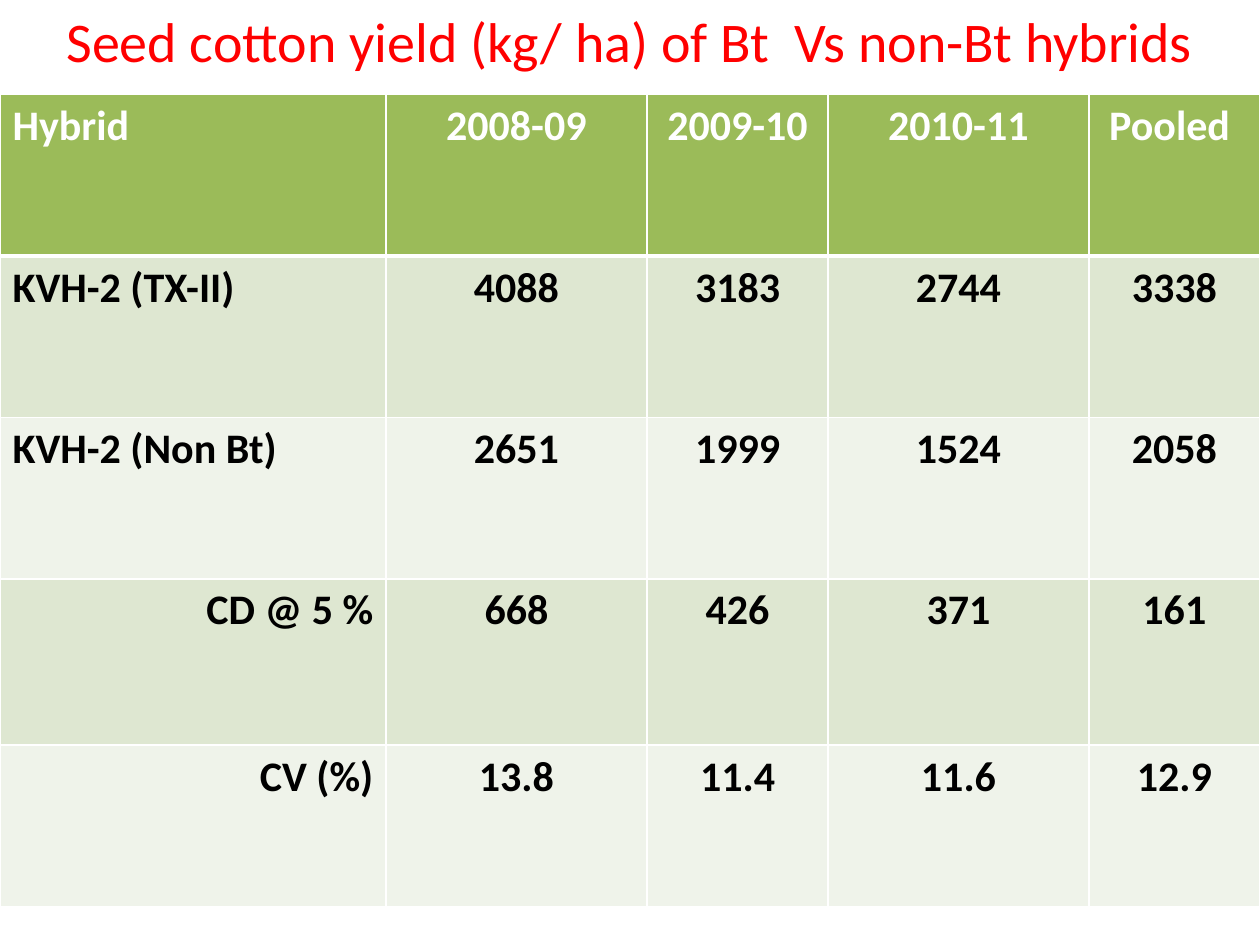
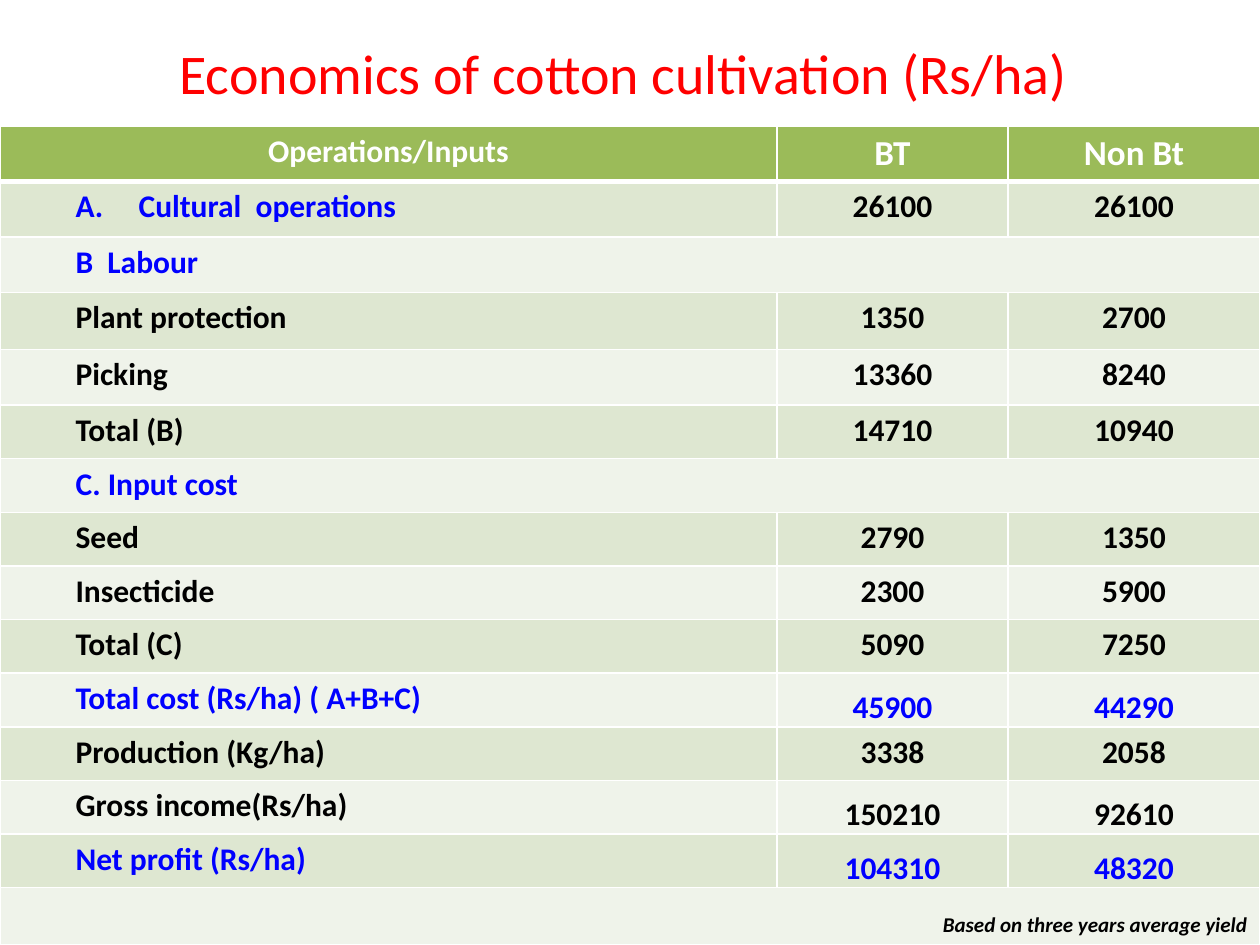
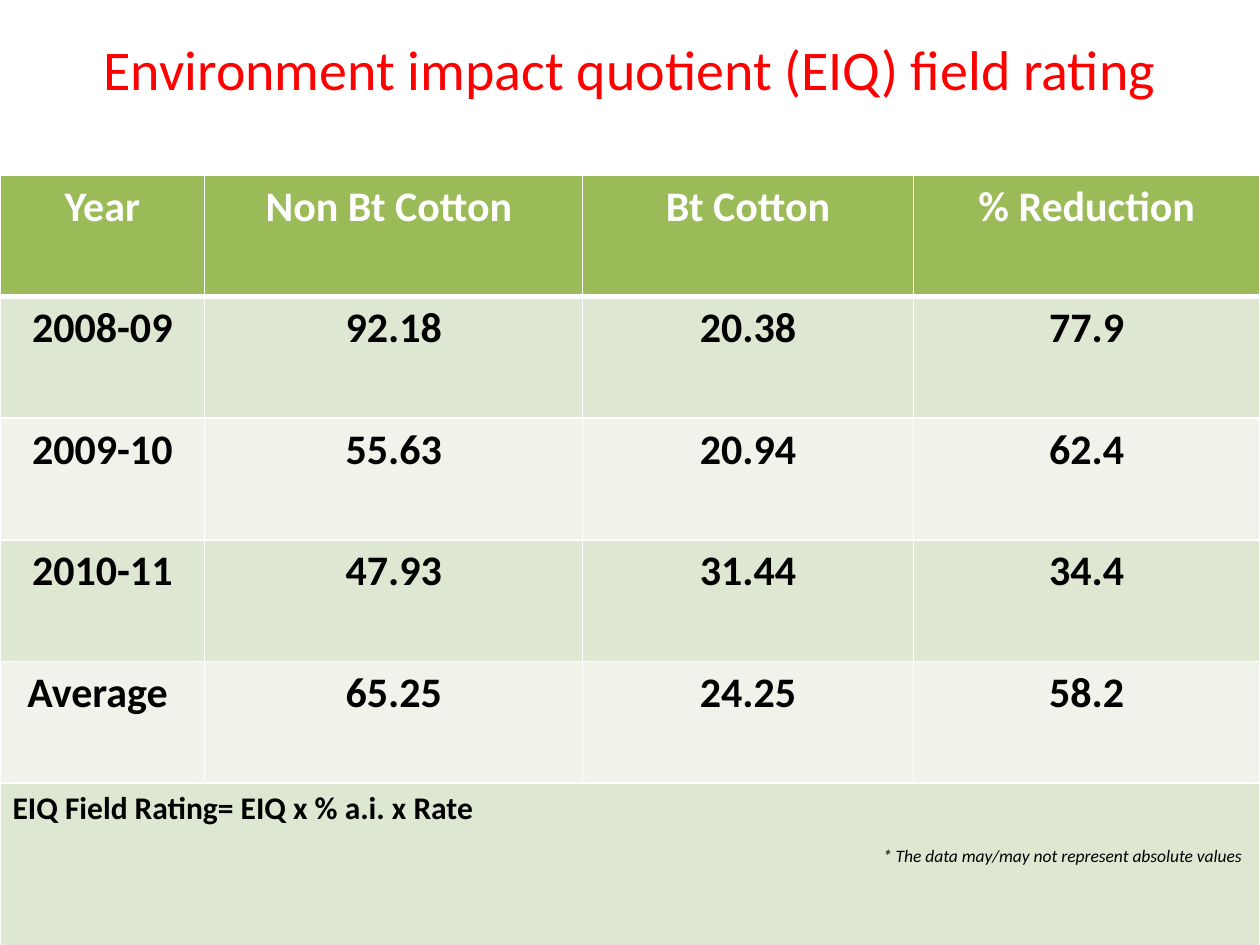
from lxml import etree
from pptx import Presentation
from pptx.dml.color import RGBColor
from pptx.enum.text import MSO_ANCHOR, MSO_AUTO_SIZE, PP_ALIGN
from pptx.oxml.ns import qn
from pptx.util import Pt

LEFT, CENTER, RIGHT = PP_ALIGN.LEFT, PP_ALIGN.CENTER, PP_ALIGN.RIGHT
BOTTOM = MSO_ANCHOR.BOTTOM
NO_FIT = MSO_AUTO_SIZE.NONE
FONT = "Calibri"
COLORS = {
    "title": "FF0000", "header": "9BBB59", "odd": "DEE7D1", "even": "EFF3EA",
    "white": "FFFFFF", "text": "000000", "accent": "0000FF",
}
SLIDE_WIDTH, SLIDE_HEIGHT, TITLE_HEIGHT = 720, 540, 46
TITLE_ONLY = 5

# Content: a row with a single entry spans the whole table
YIELD = {
    "title": "Seed cotton yield (kg/ ha) of Bt  Vs non-Bt hybrids",
    "title_top": 0, "top": 54, "size": 24,
    "widths": [220.5, 149.25, 103.5, 149, 97.75],
    "heights": [92.25] * 3 + [95, 92.25],
    "rows": [
        ["Hybrid", "2008-09", "2009-10", "2010-11", "Pooled "],
        ["KVH-2 (TX-II)", "4088", "3183", "2744", "3338"],
        ["KVH-2 (Non Bt)", "2651", "1999", "1524", "2058"],
        ["CD @ 5 %", "668", "426", "371", "161"],
        ["CV (%)", "13.8", "11.4", "11.6", "12.9"],
    ],
}
YIELD_LABEL_ALIGNMENTS = [LEFT, LEFT, LEFT, RIGHT, RIGHT]

ECONOMICS = {
    "title": "Economics of cotton cultivation (Rs/ha) ",
    "title_top": 18, "top": 72, "size": 18,
    "widths": [444, 132, 144],
    "heights": [31.75] * 3 + [32.5, 31.75] + [30.65] * 9 + [32.65],
    "rows": [
        ["Operations/Inputs", "BT", "Non Bt"],
        ["Cultural  operations", "26100", "26100"],
        ["B  Labour"],
        ["Plant protection", "1350", "2700"],
        ["Picking", "13360", "8240"],
        ["Total (B)", "14710", "10940"],
        ["C. Input cost"],
        ["Seed", "2790", "1350"],
        ["Insecticide", "2300", "5900"],
        ["Total (C)", "5090", "7250"],
        ["Total cost (Rs/ha) ( A+B+C)", "45900", "44290"],
        ["Production (Kg/ha)", "3338", "2058"],
        ["Gross income(Rs/ha)", "150210", "92610"],
        ["Net profit (Rs/ha)", "104310", "48320"],
        ["Based on three years average yield"],
    ],
}
NUMBERED_ROW, NOTE_ROW = 1, 14
ACCENT_LABELS = {1, 2, 6, 10, 13}
ACCENT_VALUES = {10, 13}
BOTTOM_VALUES = {10, 12, 13}

IMPACT = {
    "title": "Environment impact quotient (EIQ) field rating",
    "title_top": 16, "top": 100, "size": 24,
    "widths": [117, 216, 189, 198],
    "heights": [69.5] * 5 + [120],
    "rows": [
        ["Year", "Non Bt Cotton ", "Bt Cotton", "% Reduction"],
        ["2008-09", "92.18", "20.38", "77.9"],
        ["2009-10", "55.63", "20.94", "62.4"],
        ["2010-11", "47.93", "31.44", "34.4"],
        ["Average ", "65.25", "24.25", "58.2"],
        ["EIQ Field Rating= EIQ x % a.i. x Rate"],
    ],
}
DISCLAIMER = "* The data may/may not represent absolute values"


def rgb(name):
    return RGBColor.from_string(COLORS[name])


def style(para, size, color, align=LEFT, bold=False, italic=False):
    para.alignment = align
    font = para.font
    font.name, font.size, font.bold, font.italic = FONT, Pt(size), bold, italic
    font.color.rgb = rgb(color)


def set_borders(cell, is_header):
    properties = cell._tc.get_or_add_tcPr()
    for side in "LRTB":
        width = 3 if is_header and side == "B" else 1
        line = etree.SubElement(properties, qn(f"a:ln{side}"), w=str(Pt(width)))
        fill = etree.SubElement(line, qn("a:solidFill"))
        etree.SubElement(fill, qn("a:srgbClr"), val=COLORS["white"])


def add_title(page, content):
    title = page.shapes.title
    title.left, title.top = Pt(0), Pt(content["title_top"])
    title.width, title.height = Pt(SLIDE_WIDTH), Pt(TITLE_HEIGHT)
    title.text_frame.auto_size = NO_FIT
    title.text = content["title"]
    style(title.text_frame.paragraphs[0], 32, "title", CENTER)


def add_grid(page, content):
    rows, widths, heights = content["rows"], content["widths"], content["heights"]
    table = page.shapes.add_table(
        len(rows), len(widths), Pt(0), Pt(content["top"]),
        Pt(sum(widths)), Pt(sum(heights))).table
    for column, width in zip(table.columns, widths):
        column.width = Pt(width)
    for index, (texts, height) in enumerate(zip(rows, heights)):
        table.rows[index].height = Pt(height)
        is_header = index == 0
        band = "header" if is_header else ("even", "odd")[index % 2]
        for cell in table.rows[index].cells:
            set_borders(cell, is_header)
            cell.fill.solid()
            cell.fill.fore_color.rgb = rgb(band)
        if len(texts) == 1:
            table.cell(index, 0).merge(table.cell(index, len(widths) - 1))
        for position, text in enumerate(texts):
            cell = table.cell(index, position)
            cell.text = text
            style(cell.text_frame.paragraphs[0], content["size"],
                  "white" if is_header else "text", CENTER, bold=True)
    return table


def add_page(deck, content):
    page = deck.slides.add_slide(deck.slide_layouts[TITLE_ONLY])
    add_title(page, content)
    return page, add_grid(page, content)


def first_para(table, row, column=0):
    return table.cell(row, column).text_frame.paragraphs[0]


def build_yield(deck):
    _, table = add_page(deck, YIELD)
    for row, align in enumerate(YIELD_LABEL_ALIGNMENTS):
        first_para(table, row).alignment = align


def build_economics(deck):
    _, table = add_page(deck, ECONOMICS)
    for column in (1, 2):
        first_para(table, 0, column).font.size = Pt(20)

    # Indented labels, with the key lines in the accent colour
    for row in range(1, NOTE_ROW):
        para = first_para(table, row)
        para.alignment = LEFT
        properties = para._p.get_or_add_pPr()
        numbered = row == NUMBERED_ROW
        properties.set("marL", str(Pt(72 if numbered else 36)))
        properties.set("indent", str(Pt(-36 if numbered else 0)))
        if numbered:
            bullet = etree.Element(qn("a:buAutoNum"), type="alphaUcPeriod")
            properties.insert(0, bullet)
        if row in ACCENT_LABELS:
            para.font.color.rgb = rgb("accent")

    # Totals
    for row in BOTTOM_VALUES:
        for column in (1, 2):
            cell = table.cell(row, column)
            cell.vertical_anchor = BOTTOM
            cell.margin_left = cell.margin_right = cell.margin_top = Pt(0.75)
            cell.margin_bottom = Pt(0)
            if row in ACCENT_VALUES:
                first_para(table, row, column).font.color.rgb = rgb("accent")

    # Closing note
    table.cell(NOTE_ROW, 0).vertical_anchor = BOTTOM
    style(first_para(table, NOTE_ROW), 12, "text", RIGHT, bold=True, italic=True)


def build_impact(deck):
    page, table = add_page(deck, IMPACT)
    style(first_para(table, len(IMPACT["rows"]) - 1), 18, "text", bold=True)
    box = page.shapes.add_textbox(Pt(497.5), Pt(479.5), Pt(222.5), Pt(19.5))
    box.text_frame.word_wrap = False
    box.text_frame.text = DISCLAIMER
    style(box.text_frame.paragraphs[0], 10, "text", italic=True)


def main():
    deck = Presentation()
    deck.slide_width, deck.slide_height = Pt(SLIDE_WIDTH), Pt(SLIDE_HEIGHT)
    build_yield(deck)
    build_economics(deck)
    build_impact(deck)
    deck.save("out.pptx")


if __name__ == "__main__":
    main()
